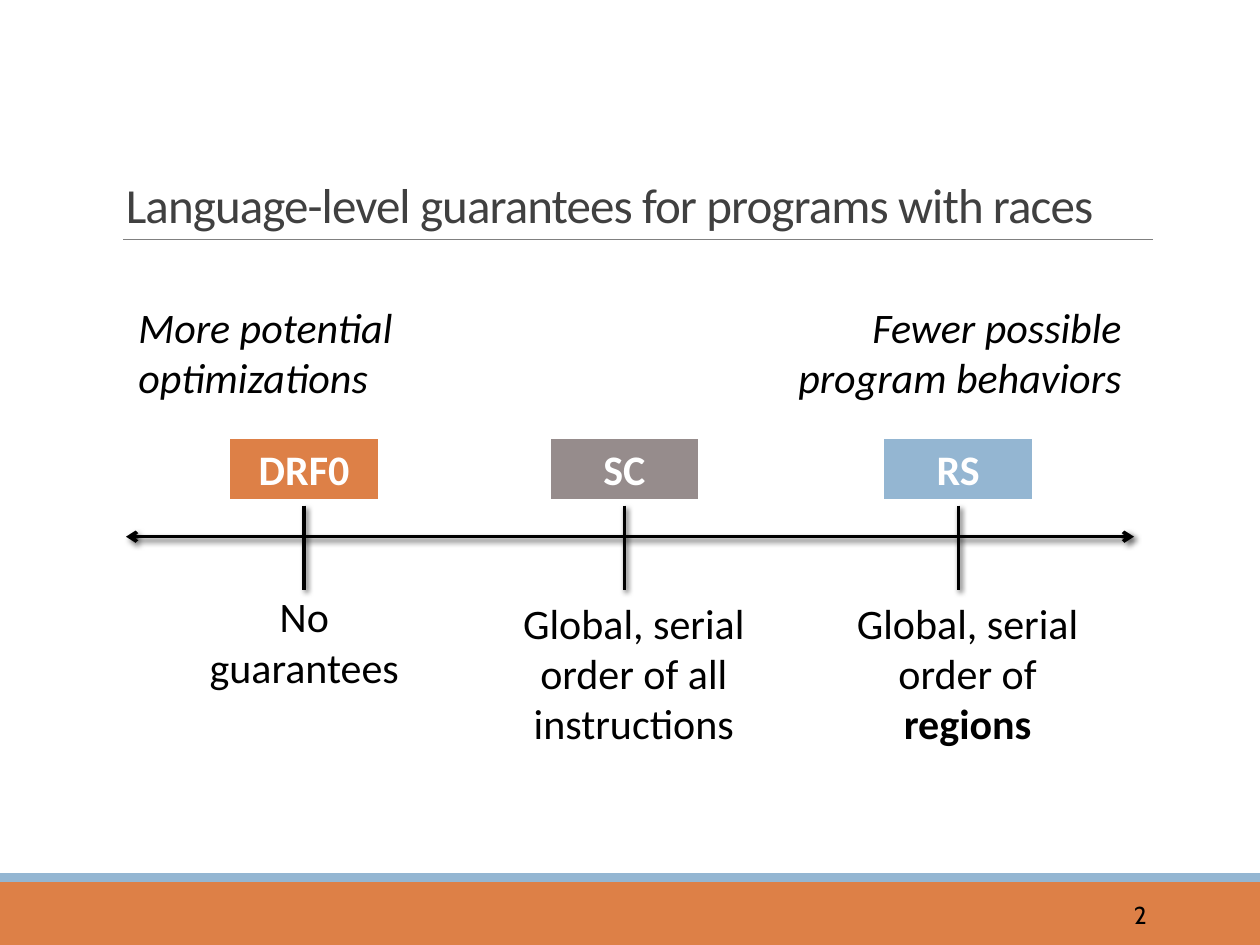
from dataclasses import dataclass

from lxml import etree
from pptx import Presentation
from pptx.dml.color import RGBColor
from pptx.enum import shapes, text
from pptx.oxml import ns
from pptx.util import Pt

HEX = {
    "black": "000000",
    "white": "FFFFFF",
    "title": "404040",
    "rule": "808080",
    "orange": "DD8047",
    "gray": "968C8C",
    "blue": "94B6D2",
}
LEFT, MID, RIGHT = text.PP_ALIGN.LEFT, text.PP_ALIGN.CENTER, text.PP_ALIGN.RIGHT


@dataclass
class Model:
    name: str
    color: str
    mid: float
    note: str
    note_mid: float
    note_top: float
    note_wide: float
    bold: str = ""


MODELS = [
    Model("DRF0", "orange", 173.8, "No\nguarantees", 173.9, 334, 132),
    Model("SC", "gray", 356.8, "Global, serial order of all instructions",
          362.2, 337.7, 154),
    Model("RS", "blue", 547.6, "Global, serial order of ",
          552.9, 337.7, 154, "regions"),
]


def rgb(name: str) -> RGBColor:
    return RGBColor.from_string(HEX[name])


def style(frame, size: float, color: str, align, face: str = "Calibri",
          bold: bool = False, italic: bool = False) -> None:
    for para in frame.paragraphs:
        para.alignment = align
        for run in para.runs:
            font = run.font
            font.name, font.size = face, Pt(size)
            font.bold, font.italic = bold, italic
            font.color.rgb = rgb(color)


def add_text(slide, words: str, x: float, y: float, w: float, h: float,
             size: float, align, color: str = "black",
             anchor=text.MSO_ANCHOR.TOP, **look):
    box = slide.shapes.add_textbox(Pt(x), Pt(y), Pt(w), Pt(h))
    frame = box.text_frame
    frame.word_wrap = True
    frame.vertical_anchor = anchor
    frame.text = words
    style(frame, size, color, align, **look)
    return frame


def add_rect(slide, x: float, y: float, w: float, h: float, color: str):
    rect = slide.shapes.add_shape(
        shapes.MSO_SHAPE.RECTANGLE, Pt(x), Pt(y), Pt(w), Pt(h))
    rect.shadow.inherit = False
    rect.fill.solid()
    rect.fill.fore_color.rgb = rgb(color)
    rect.line.fill.background()
    return rect


def add_line(slide, x1: float, y1: float, x2: float, y2: float,
             color: str = "black", width: float = 2,
             shade: bool = True, arrows: bool = False) -> None:
    line = slide.shapes.add_connector(
        shapes.MSO_CONNECTOR.STRAIGHT, Pt(x1), Pt(y1), Pt(x2), Pt(y2))
    line.line.color.rgb = rgb(color)
    line.line.width = Pt(width)
    if arrows:
        for end in ("a:headEnd", "a:tailEnd"):
            etree.SubElement(line.line._ln, ns.qn(end), type="arrow")
    props = line._element.spPr
    effect = etree.SubElement(props, ns.qn("a:effectLst"))
    if shade:
        shadow = etree.SubElement(
            effect, ns.qn("a:outerShdw"), blurRad=str(Pt(3)),
            dist=str(Pt(2)), dir=str(45 * 60000), rotWithShape="0")
        tint = etree.SubElement(shadow, ns.qn("a:srgbClr"), val=HEX["black"])
        etree.SubElement(tint, ns.qn("a:alpha"), val="60000")


def add_model(slide, model: Model) -> None:
    """Draw one memory model: its note, its tick on the axis and its label."""
    frame = add_text(slide, model.note, model.note_mid - model.note_wide / 2,
                     model.note_top, model.note_wide, 65.5, 24, MID)
    if model.bold:
        run = frame.paragraphs[0].add_run()
        run.text = model.bold
        style(frame, 24, "black", MID)
        run.font.bold = True

    add_line(slide, model.mid, 289, model.mid, 337)

    label = add_rect(slide, model.mid - 43.2, 249.8, 86.4, 36.3, model.color)
    label.line.color.rgb = rgb("white")
    label.line.width = Pt(2)
    label.text_frame.text = model.name
    style(label.text_frame, 24, "white", MID, bold=True)


def main() -> None:
    deck = Presentation()
    deck.slide_width, deck.slide_height = Pt(720), Pt(540)
    slide = deck.slides.add_slide(deck.slide_layouts[6])

    add_rect(slide, 0, 504, 720, 36, "orange")
    add_rect(slide, 0, 499, 720, 5, "blue")
    add_line(slide, 70.5, 136.8, 658.8, 136.8, "rule", 0.5, shade=False)

    title = add_text(
        slide, "Language-level guarantees for programs with races",
        64.8, 22.3, 594, 114.5, 28, LEFT, "title", text.MSO_ANCHOR.BOTTOM)
    para = title.paragraphs[0]
    para.line_spacing = 0.85
    para.runs[0].font._element.set("spc", "-50")

    add_text(slide, "2", 584.6, 508.3, 77.8, 28.8, 14, RIGHT,
             anchor=text.MSO_ANCHOR.MIDDLE, face="Cabin")

    add_line(slide, 72, 306.7, 648, 306.7, arrows=True)
    add_text(slide, "Fewer possible program behaviors",
             432, 168.5, 216, 65.5, 24, RIGHT, italic=True)
    add_text(slide, "More potential optimizations",
             72, 168.5, 192, 65.5, 24, LEFT, italic=True)

    for model in MODELS:
        add_model(slide, model)

    deck.save("out.pptx")


if __name__ == "__main__":
    main()
